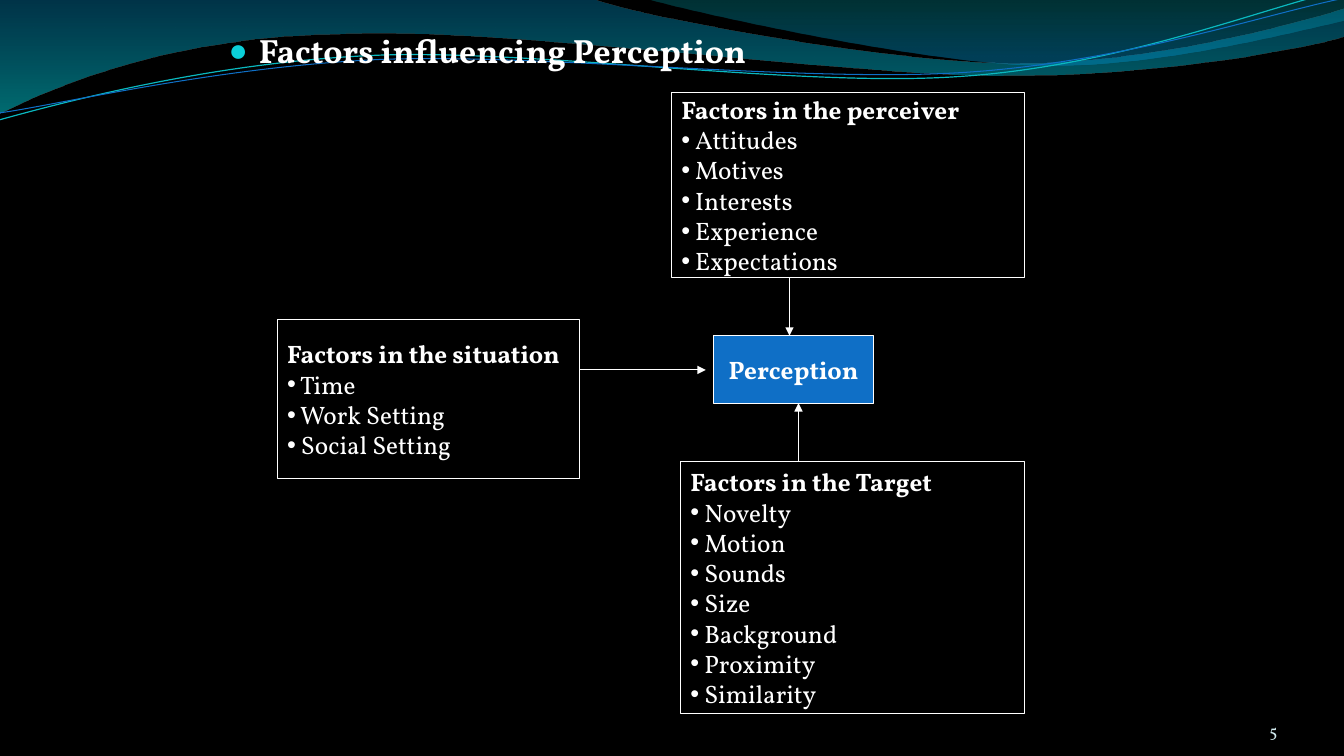
"""Build a slide showing the factors that influence perception."""
from dataclasses import dataclass

from lxml import etree
from pptx import Presentation
from pptx.dml.color import RGBColor
from pptx.enum.shapes import MSO_CONNECTOR as Connector, MSO_SHAPE as Preset
from pptx.enum.text import MSO_ANCHOR as Anchor, PP_ALIGN as Align
from pptx.oxml.ns import qn
from pptx.util import Inches, Pt


@dataclass(frozen=True)
class Theme:
    font: str = "Vollkorn"
    bullet_font: str = "Arial"
    background: str = "000000"
    text: str = "FFFFFF"
    accent: str = "0F6FC6"
    wave_line: str = "0AB8BF"
    title_bullet: str = "0BD0D9"
    number: str = "D1EAEE"
    title_size: float = 24
    body_size: float = 18
    number_size: float = 12
    line_width: float = 0.75
    wave_width: float = 0.85


THEME = Theme()
TITLE = "Factors influencing Perception"
SLIDE_NUMBER = "5"
CENTER = ("Perception", (7.08, 3.33, 1.58, 0.67))
FACTORS = [
    ("Factors in the perceiver", (6.66, 0.92, 3.5, 1.83),
     ["Attitudes", "Motives", "Interests", "Experience", "Expectations"]),
    ("Factors in the Target", (6.75, 4.58, 3.41, 2.5),
     ["Novelty", "Motion", "Sounds", "Size", "Background", "Proximity", "Similarity"]),
    ("Factors in the situation", (2.75, 3.17, 3, 1.58),
     ["Time", "Work Setting", "Social Setting"]),
]
ARROWS = [
    ((5.75, 3.67), (7, 3.67)),
    ((7.92, 4.58), (7.92, 4)),
    ((7.83, 2.75), (7.83, 3.33)),
]
# Each outline is a start followed by lines (2 numbers) and Bezier curves (6 numbers).
BANDS = [
    ([(0, 0), (5.87, -0.01), (6.34, 0.17, 8.85, 0.63, 10.11, 0.63),
      (11.38, 0.63, 12.78, 0.26, 13.33, 0.09), (13.35, 0.36),
      (13.11, 0.44, 11.6, 0.76, 9.94, 0.75), (8.29, 0.75, 5.09, 0.28, 3.43, 0.34),
      (1.72, 0.36, 0.61, 0.83, -0.01, 1.13)],
     [(0, "0074A1", 45), (1, "00C6CF", 55)]),
    ([(6.39, -0.01), (6.79, 0.11, 9.09, 0.62, 10.25, 0.65),
      (11.41, 0.69, 12.82, 0.32, 13.33, 0.21), (13.33, 0)],
     [(0, "00A1A9", 30), (0.8, "008BBF", 45)]),
]
WAVES = [
    ([(-0.01, 1.19), (0.64, 1.01, 2.11, 0.62, 3.69, 0.55),
      (5.27, 0.48, 7.9, 0.87, 9.5, 0.76), (11.1, 0.66, 12.52, 0.08, 13.31, -0.1)],
     THEME.wave_line, THEME.wave_width),
    ([(0, 1.12), (0.63, 1.03, 2.18, 0.66, 3.78, 0.59),
      (5.37, 0.53, 7.96, 0.82, 9.55, 0.72), (11.15, 0.62, 12.55, 0.14, 13.34, -0.02)],
     THEME.accent, THEME.line_width),
]


def color(value):
    return RGBColor.from_string(value)


def box(place):
    return [Inches(length) for length in place]


def set_line(shape, value, width=THEME.line_width):
    shape.line.color.rgb = color(value)
    shape.line.width = Pt(width)


def add_outline(slide, outline, close):
    points = [box(segment[i:i + 2]) for segment in outline for i in range(0, len(segment), 2)]
    builder = slide.shapes.build_freeform(*points[0])
    builder.add_line_segments(points[1:], close=close)
    shape = builder.convert_to_shape()
    shape.shadow.inherit = False
    lines = iter(list(shape._element.iter(qn("a:lnTo"))))
    for segment in outline[1:]:
        line = next(lines)
        if len(segment) == 6:
            line.addprevious(curve := etree.Element(qn("a:cubicBezTo")))
            for part in (line, next(lines), next(lines)):
                curve.append(part[0])
                part.getparent().remove(part)
    return shape


def add_band(slide, outline, stops):
    shape = add_outline(slide, outline, True)
    shape.line.fill.background()
    shape.fill.gradient()
    shape.fill.gradient_angle = 270
    for stop, (position, value, opacity) in zip(shape.fill.gradient_stops, stops):
        stop.position = position
        stop.color.rgb = color(value)
    tones = shape._element.spPr.iter(qn("a:srgbClr"))
    for tone, (position, value, opacity) in zip(tones, stops):
        etree.SubElement(tone, qn("a:alpha"), val=str(opacity * 1000))


def add_wave(slide, outline, value, width):
    shape = add_outline(slide, outline, False)
    shape.fill.background()
    set_line(shape, value, width)


def format_paragraph(paragraph, size, value, bold=False, align=Align.LEFT):
    paragraph.alignment = align
    for run in paragraph.runs:
        run.font.name = THEME.font
        run.font.size = Pt(size)
        run.font.bold = bold
        run.font.color.rgb = color(value)


def add_bullet(paragraph, symbol, value=THEME.text, percent=100):
    properties = paragraph._p.get_or_add_pPr()
    tone = etree.SubElement(properties, qn("a:buClr"))
    etree.SubElement(tone, qn("a:srgbClr"), val=value)
    etree.SubElement(properties, qn("a:buSzPct"), val=str(percent * 1000))
    etree.SubElement(properties, qn("a:buFont"), typeface=THEME.bullet_font)
    etree.SubElement(properties, qn("a:buChar"), char=symbol)


def add_title(slide):
    frame = slide.shapes.add_textbox(*box((2.17, 0.25, 9, 7))).text_frame
    frame.word_wrap = True
    frame.text = TITLE
    paragraph = frame.paragraphs[0]
    format_paragraph(paragraph, THEME.title_size, THEME.text, bold=True)
    properties = paragraph._p.get_or_add_pPr()
    properties.set("marL", str(Inches(0.3)))
    properties.set("indent", str(Inches(-0.3)))
    add_bullet(paragraph, "●", THEME.title_bullet, 95)


def add_number(slide):
    frame = slide.shapes.add_textbox(*box((11.56, 6.95, 1.11, 0.4))).text_frame
    frame.margin_left = frame.margin_right = frame.margin_top = frame.margin_bottom = 0
    frame.word_wrap = True
    frame.vertical_anchor = Anchor.BOTTOM
    frame.text = SLIDE_NUMBER
    format_paragraph(frame.paragraphs[0], THEME.number_size, THEME.number, align=Align.RIGHT)


def add_box(slide, heading, place, items=(), fill=THEME.background, align=Align.LEFT):
    shape = slide.shapes.add_shape(Preset.RECTANGLE, *box(place))
    shape.shadow.inherit = False
    shape.fill.solid()
    shape.fill.fore_color.rgb = color(fill)
    set_line(shape, THEME.text)
    frame = shape.text_frame
    frame.word_wrap = False
    frame.vertical_anchor = Anchor.MIDDLE
    frame.text = heading
    format_paragraph(frame.paragraphs[0], THEME.body_size, THEME.text, True, align)
    for item in items:
        paragraph = frame.add_paragraph()
        paragraph.text = f" {item}"
        format_paragraph(paragraph, THEME.body_size, THEME.text)
        add_bullet(paragraph, "•")


def add_arrow(slide, start, end):
    arrow = slide.shapes.add_connector(Connector.STRAIGHT, *box(start + end))
    set_line(arrow, THEME.text)
    etree.SubElement(arrow.line._get_or_add_ln(), qn("a:tailEnd"), type="triangle")
    etree.SubElement(arrow._element.spPr, qn("a:effectLst"))


def main():
    presentation = Presentation()
    presentation.slide_width, presentation.slide_height = Inches(13.33), Inches(7.5)
    slide = presentation.slides.add_slide(presentation.slide_layouts[6])
    slide.background.fill.solid()
    slide.background.fill.fore_color.rgb = color(THEME.background)
    for band in BANDS:
        add_band(slide, *band)
    for wave in WAVES:
        add_wave(slide, *wave)
    add_title(slide)
    add_number(slide)
    for factor in FACTORS:
        add_box(slide, *factor)
    add_box(slide, *CENTER, fill=THEME.accent, align=Align.CENTER)
    for arrow in ARROWS:
        add_arrow(slide, *arrow)
    presentation.save("out.pptx")


if __name__ == "__main__":
    main()
